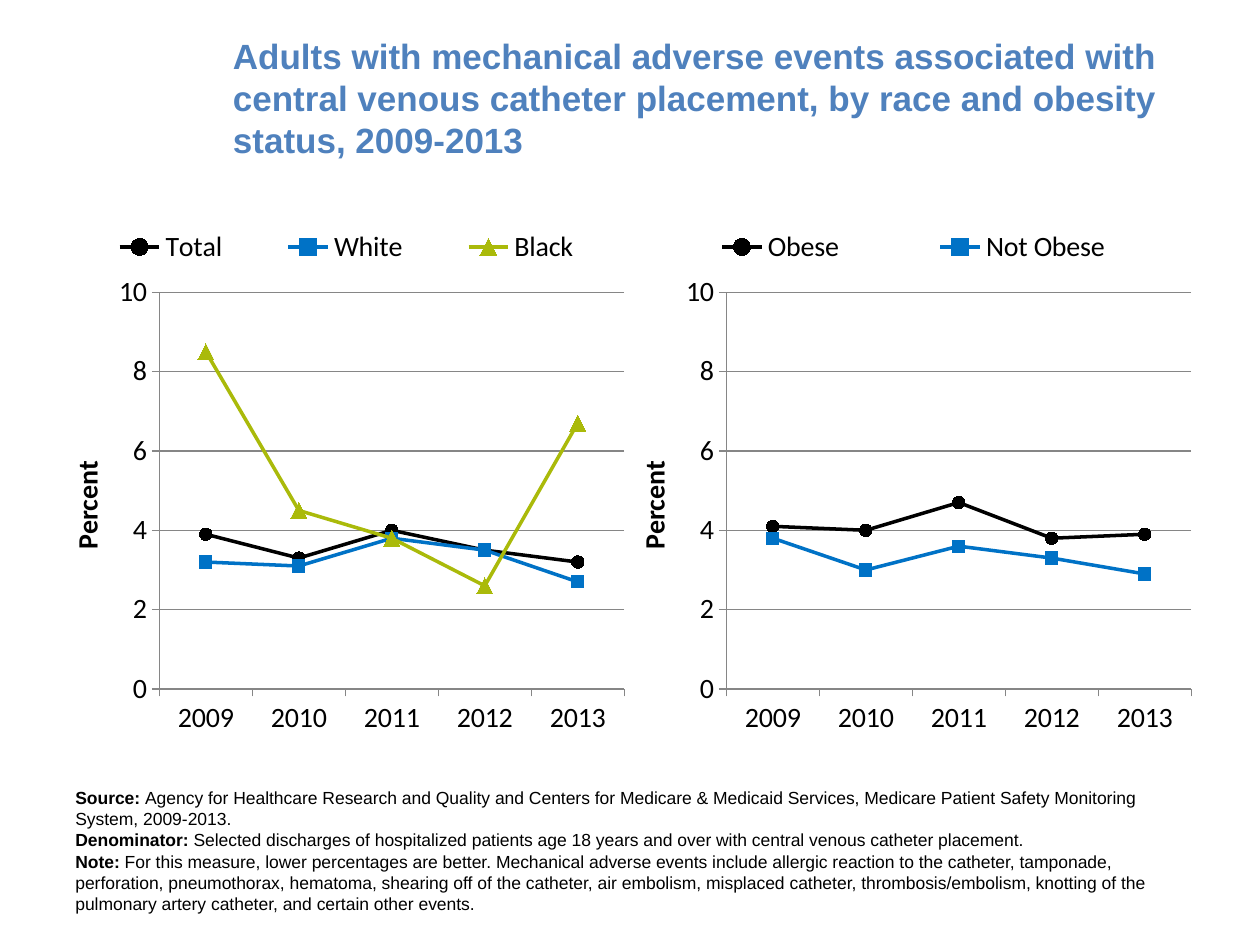
from lxml.etree import SubElement
from pptx import Presentation
from pptx.chart.data import CategoryChartData
from pptx.dml.color import RGBColor
from pptx.enum.chart import XL_CHART_TYPE, XL_LEGEND_POSITION, XL_MARKER_STYLE, XL_TICK_MARK
from pptx.enum.text import MSO_ANCHOR
from pptx.oxml.ns import qn
from pptx.util import Emu, Pt

PX = 9144  # 100 px to the inch

BLACK, BLUE, GREEN = "000000", "0072C6", "AABA0A"
TITLE_BLUE, GRAY = "4F81BD", "868686"

YEARS = ["2009", "2010", "2011", "2012", "2013"]
# Colour, marker and marker size, by series order
SERIES_LOOKS = [
    (BLACK, XL_MARKER_STYLE.CIRCLE, 7),
    (BLUE, XL_MARKER_STYLE.SQUARE, 7),
    (GREEN, XL_MARKER_STYLE.TRIANGLE, 9),
]
RACE_RATES = {
    "Total": [3.9, 3.3, 4, 3.5, 3.2],
    "White": [3.2, 3.1, 3.8, 3.5, 2.7],
    "Black": [8.5, 4.5, 3.8, 2.6, 6.7],
}
OBESITY_RATES = {
    "Obese": [4.1, 4, 4.7, 3.8, 3.9],
    "Not Obese": [3.8, 3, 3.6, 3.3, 2.9],
}

TITLE = ("Adults with mechanical adverse events associated with central venous "
         "catheter placement, by race and obesity status, 2009-2013")
NOTES = [
    ("Source: ", "Agency for Healthcare Research and Quality and Centers for Medicare "
     "& Medicaid Services, Medicare Patient Safety Monitoring System, 2009-2013."),
    ("Denominator: ", "Selected discharges of hospitalized patients age 18 years and "
     "over with central venous catheter placement."),
    ("Note:", " For this measure, lower percentages are better. Mechanical adverse "
     "events include allergic reaction to the catheter, tamponade, perforation, "
     "pneumothorax, hematoma, shearing off of the catheter, air embolism, misplaced "
     "catheter, thrombosis/embolism, knotting of the pulmonary artery catheter, and "
     "certain other events."),
]


def px(*lengths):
    return [Emu(length * PX) for length in lengths]


def color(hex_value):
    return RGBColor.from_string(hex_value)


def set_values(target, values):
    for name, value in values.items():
        setattr(target, name, value)


def style_font(font, size, name, hex_value=BLACK, bold=False):
    set_values(font, {"size": Pt(size), "name": name, "bold": bold})
    font.color.rgb = color(hex_value)


def style_line(line, hex_value, width):
    line.color.rgb = color(hex_value)
    line.width = Pt(width)


def add_text(slide, box, paragraphs, size, hex_value, anchor):
    """Each paragraph is a bold lead followed by plain text."""
    frame = slide.shapes.add_textbox(*px(*box)).text_frame
    set_values(frame, {"word_wrap": True, "vertical_anchor": anchor})
    for index, parts in enumerate(paragraphs):
        paragraph = frame.paragraphs[0] if index == 0 else frame.add_paragraph()
        for part, bold in zip(parts, (True, False)):
            run = paragraph.add_run()
            run.text = part
            style_font(run.font, size, "Arial", hex_value, bold)


def set_layout(parent, index, x, y, w, h, inner=False):
    """Place a chart part by fractions of the chart's size."""
    for old_layout in parent.findall(qn("c:layout")):
        parent.remove(old_layout)
    layout = SubElement(parent, qn("c:layout"))
    parent.insert(index, layout)
    manual = SubElement(layout, qn("c:manualLayout"))
    settings = [("layoutTarget", "inner")] if inner else []
    settings += [("xMode", "edge"), ("yMode", "edge"),
                 ("x", x), ("y", y), ("w", w), ("h", h)]
    for tag, value in settings:
        SubElement(manual, qn(f"c:{tag}")).set("val", str(value))


def style_axes(chart):
    for axis in (chart.category_axis, chart.value_axis):
        set_values(axis, {"major_tick_mark": XL_TICK_MARK.OUTSIDE,
                          "minor_tick_mark": XL_TICK_MARK.NONE})
        style_font(axis.tick_labels.font, 16, "Calibri")
        style_line(axis.format.line, GRAY, 0.75)

    percent_axis = chart.value_axis
    set_values(percent_axis, {"minimum_scale": 0, "maximum_scale": 10,
                              "major_unit": 2, "has_major_gridlines": True})
    set_values(percent_axis.tick_labels, {"number_format": "0",
                                          "number_format_is_linked": False})
    style_line(percent_axis.major_gridlines.format.line, GRAY, 0.75)
    percent_title = percent_axis.axis_title.text_frame
    percent_title.text = "Percent"
    style_font(percent_title.paragraphs[0].runs[0].font, 16, "Calibri", bold=True)


def style_series(series, hex_value, marker_style, marker_size):
    series.smooth = False
    style_line(series.format.line, hex_value, 2)
    marker = series.marker
    set_values(marker, {"style": marker_style, "size": marker_size})
    marker.format.fill.solid()
    marker.format.fill.fore_color.rgb = color(hex_value)
    marker.format.line.color.rgb = color(hex_value)


def add_rate_chart(slide, box, rates):
    data = CategoryChartData(number_format="0.0")
    data.categories = YEARS
    for name, values in rates.items():
        data.add_series(name, values)
    chart = slide.shapes.add_chart(XL_CHART_TYPE.LINE_MARKERS, *px(*box), data).chart
    set_values(chart, {"has_title": False, "has_legend": True})
    style_font(chart.font, 10, "Arial")
    style_axes(chart)

    plot = chart.plots[0]
    plot.vary_by_categories = False
    for series, look in zip(plot.series, SERIES_LOOKS):
        style_series(series, *look)

    # Legend across the top, plot below it
    legend = chart.legend
    set_values(legend, {"position": XL_LEGEND_POSITION.TOP, "include_in_layout": False})
    style_font(legend.font, 16, "Calibri")
    set_layout(legend._element, 1, 0, 0.04, 1, 0.08)
    plot_area = chart._chartSpace.chart.plotArea
    set_layout(plot_area, 0, 0.17, 0.16, 0.82, 0.7, inner=True)


def main():
    deck = Presentation()
    deck.slide_width, deck.slide_height = px(1000, 750)
    slide = deck.slides.add_slide(deck.slide_layouts[6])

    # Title
    add_text(slide, (175, 30, 775, 95), [(TITLE,)], 20, TITLE_BLUE, MSO_ANCHOR.MIDDLE)

    # Charts side by side
    chart_size = 450
    for column, rates in enumerate((RACE_RATES, OBESITY_RATES)):
        left = 50 + column * chart_size
        add_rate_chart(slide, (left, 160, chart_size, chart_size), rates)

    # Source and notes
    add_text(slide, (50, 620, 900, 111), NOTES, 10, BLACK, MSO_ANCHOR.TOP)

    deck.save("out.pptx")


if __name__ == "__main__":
    main()
